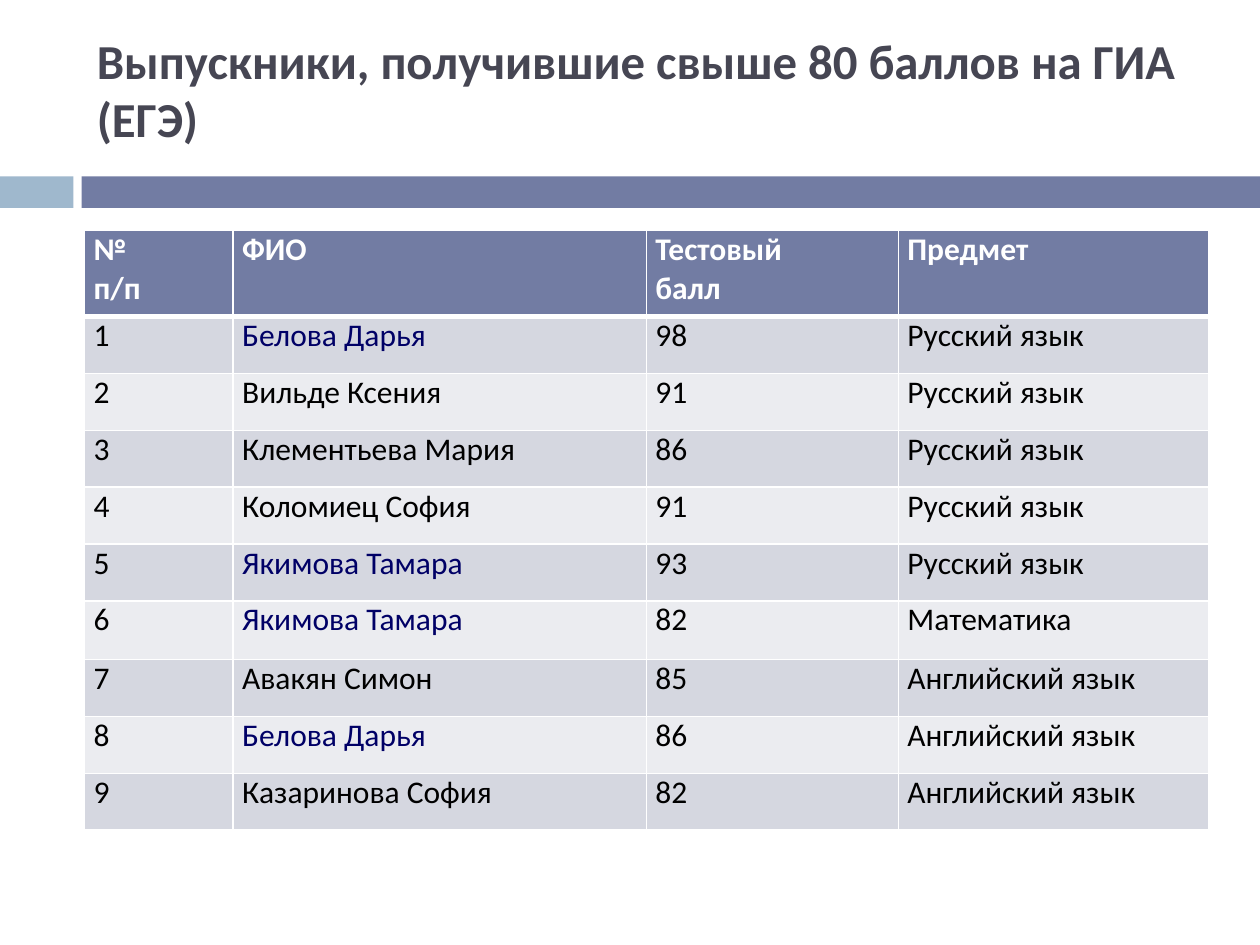
from lxml.etree import SubElement
from pptx import Presentation
from pptx.dml.color import RGBColor as RGB
from pptx.enum.shapes import MSO_SHAPE as SHAPE
from pptx.enum.text import MSO_ANCHOR as ANCHOR, PP_ALIGN as ALIGN
from pptx.oxml.ns import qn
from pptx.util import Pt

COLORS = {
    "accent": "9FB8CD", "main": "727CA3", "title": "464653", "white": "FFFFFF",
    "black": "000000", "navy": "000066", "dark_band": "D5D7E0", "light_band": "EBECF0",
}
HEADER = ["№\vп/п", "ФИО", "Тестовый\vбалл", "Предмет"]
RESULTS = [
    ("Белова Дарья", 98, "Русский язык"),
    ("Вильде Ксения", 91, "Русский язык"),
    ("Клементьева Мария", 86, "Русский язык"),
    ("Коломиец София", 91, "Русский язык"),
    ("Якимова Тамара", 93, "Русский язык"),
    ("Якимова Тамара", 82, "Математика"),
    ("Авакян Симон", 85, "Английский язык"),
    ("Белова Дарья", 86, "Английский язык"),
    ("Казаринова София", 82, "Английский язык"),
]
REPEATED = {"Белова Дарья", "Якимова Тамара"}
COL_WIDTHS = [84.96, 236.16, 144, 177.12]
ROW_HEIGHTS = [49.2] + [32.5] * 5 + [33.6] + [32.5] * 3


def set_text(tf, text, color, align, margins, **font):
    for name, value in margins.items():
        setattr(tf, name, Pt(value))
    p = tf.paragraphs[0]
    p.text = text
    p.alignment = align
    for r in p.runs:
        for name, value in {"name": "Calibri", **font}.items():
            setattr(r.font, name, value)
        r.font.color.rgb = RGB.from_string(COLORS[color])


def add_title(s, x, y, w, h):
    tf = s.shapes.add_textbox(Pt(x), Pt(y), Pt(w), Pt(h)).text_frame
    tf.word_wrap = True
    tf.vertical_anchor = ANCHOR.MIDDLE
    set_text(tf, "Выпускники, получившие свыше 80 баллов на ГИА (ЕГЭ)", "title",
             ALIGN.LEFT, {"margin_top": 3.6, "margin_bottom": 15.6},
             size=Pt(27.9), bold=True)


def add_band(s, x, y, w, h, accent_w=42, gap=4.6):
    main_x = x + accent_w + gap
    for left, width, color in [(x, accent_w, "accent"), (main_x, x + w - main_x, "main")]:
        bar = s.shapes.add_shape(SHAPE.RECTANGLE, Pt(left), Pt(y), Pt(width), Pt(h))
        bar.shadow.inherit = False
        bar.fill.solid()
        bar.fill.fore_color.rgb = RGB.from_string(COLORS[color])
        bar.line.fill.background()


def set_borders(cell, **widths):
    tc_pr = cell._tc.get_or_add_tcPr()
    for side in "LRTB":
        ln = SubElement(tc_pr, qn(f"a:ln{side}"), w=str(Pt(widths.get(side, 1))))
        fill = SubElement(ln, qn("a:solidFill"))
        SubElement(fill, qn("a:srgbClr"), val=COLORS["white"])


def add_results(s, x, y, w, h):
    rows = [HEADER] + [(i, *result) for i, result in enumerate(RESULTS, 1)]
    table = s.shapes.add_table(len(rows), len(HEADER), Pt(x), Pt(y), Pt(w), Pt(h)).table
    for col, width in zip(table.columns, COL_WIDTHS):
        col.width = Pt(width)
    margins = {"margin_left": 5.2, "margin_right": 5.2, "margin_top": 0, "margin_bottom": 0}
    for i, (row, values) in enumerate(zip(table.rows, rows)):
        row.height = Pt(ROW_HEIGHTS[i])
        is_header = i == 0
        band = "main" if is_header else "dark_band" if i % 2 else "light_band"
        edges = {0: {"B": 3}, 1: {"T": 3}}.get(i, {})
        for cell, value in zip(row.cells, values):
            set_borders(cell, **edges)
            cell.fill.solid()
            cell.fill.fore_color.rgb = RGB.from_string(COLORS[band])
            for name, margin in margins.items():
                setattr(cell, name, Pt(margin))
            color = "white" if is_header else "navy" if value in REPEATED else "black"
            set_text(cell.text_frame, str(value), color, ALIGN.JUSTIFY, {},
                     size=Pt(18), bold=is_header)


def main():
    prs = Presentation()
    prs.slide_width, prs.slide_height = Pt(720), Pt(540)
    s = prs.slides.add_slide(prs.slide_layouts[6])
    add_band(s, 0, 100.8, 720, 18)
    add_title(s, 48.24, 18, 642.24, 77.76)
    add_results(s, 48.24, 131.76, sum(COL_WIDTHS), sum(ROW_HEIGHTS))
    prs.save("out.pptx")


if __name__ == "__main__":
    main()
